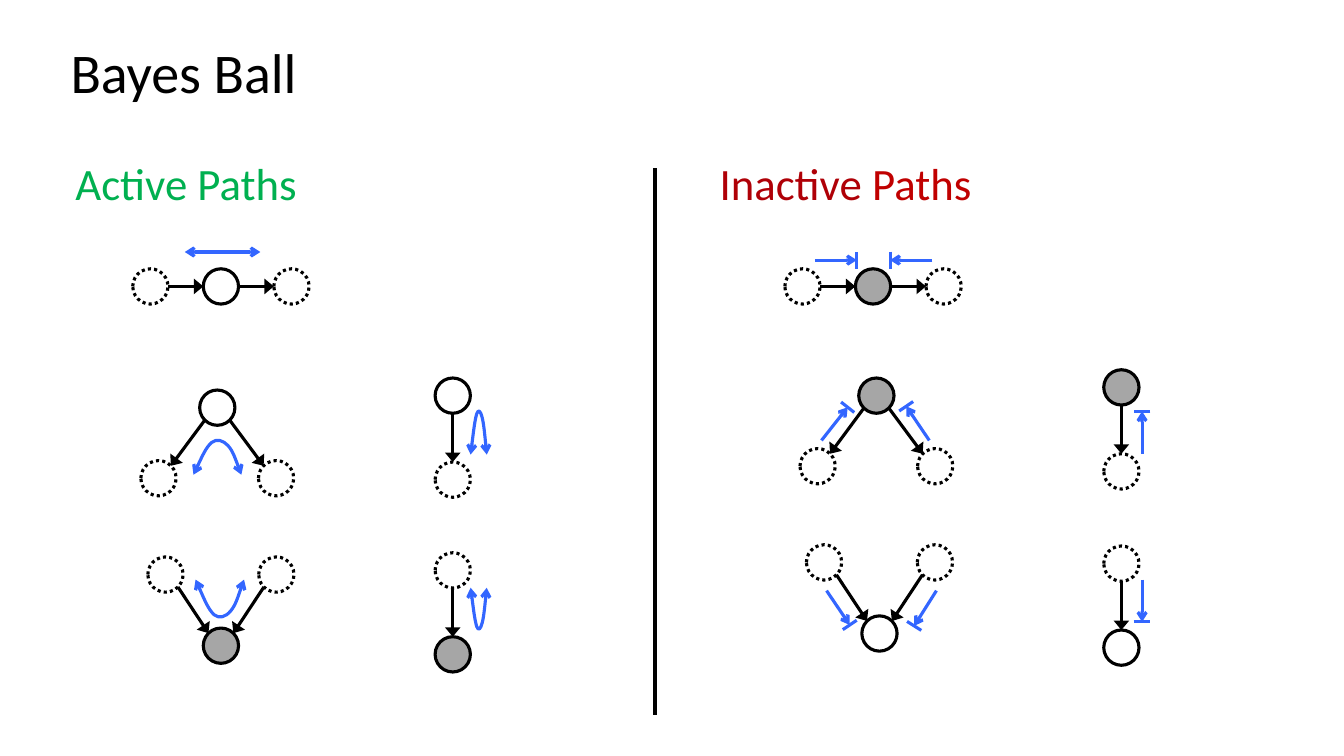
from math import atan2, cos, hypot, pi, sin

from lxml.etree import SubElement
from pptx import Presentation
from pptx.dml.color import RGBColor
from pptx.enum.dml import MSO_LINE
from pptx.enum.shapes import MSO_CONNECTOR, MSO_SHAPE
from pptx.enum.text import MSO_ANCHOR, MSO_AUTO_SIZE, PP_ALIGN
from pptx.oxml.ns import qn
from pptx.util import Pt

COLORS = {
    "black": "000000", "hidden": "FFFFFF", "observed": "A6A6A6",
    "ball": "3366FF", "green": "00B050", "dark red": "AF0007", "red": "C00000",
}
FONT = "Calibri"
TITLE = "Bayes Ball"
TITLE_BOX = (43.2, 28.8, 828, 49.7)
HEADINGS = [
    ((46.8, 108, 288, 46), [("Active Paths", "green")]),
    ((506.9, 108, 315.4, 46), [("Inactive", "dark red"), (" Paths", "red")]),
]
DIVIDER = ((468, 120.2), (468, 510.5))

DIAMETER = 25.2
BAR_LENGTH = 12
LINE_WIDTH = 2.25
EDGE_HEAD = {"type": "triangle", "w": "lg", "len": "med"}
BALL_HEAD = {"type": "arrow"}

# Dotted neighbours of the solid node: x offset, y offset, arrow direction
MOTIFS = {
    "chain": [(-50.4, 0, "in"), (50.4, 0, "out")],
    "fork": [(-42, 50.4, "out"), (42, 50.4, "out")],
    "collider": [(-39.6, -50.8, "in"), (39.6, -50.8, "in")],
    "parent": [(0, 60, "out")],
    "child": [(0, -60, "in")],
}
# Motif, centre of its solid node, state of that node
GRAPHS = [
    ("chain", (157.8, 204.6), "hidden"),
    ("fork", (155.2, 291.2), "hidden"),
    ("collider", (157.8, 461.2), "observed"),
    ("parent", (323.4, 282.6), "hidden"),
    ("child", (323.4, 467.4), "observed"),
    ("chain", (623.6, 204.6), "observed"),
    ("fork", (626, 282.6), "observed"),
    ("collider", (628.2, 452.5), "hidden"),
    ("parent", (801, 276.7), "observed"),
    ("child", (801, 462.6), "hidden"),
]
PASSING_BALL = ((132, 180), (186, 180))
# Left end of each bounce, width, height (negative rises)
BOUNCES = [
    (138.2, 339.1, 34.2, -24.5),
    (139.7, 414, 34.6, 26.6),
    (336.2, 324.7, 11.5, -31),
    (336.2, 419.8, 11.5, 29.5),
]
# Control points, in a unit box, of three cubic curves that start at (0, 0)
BOUNCE_CURVES = [
    [(0.13, 0.38), (0.26, 0.79), (0.38, 0.94)],
    [(0.49, 1.06), (0.62, 1), (0.72, 0.85)],
    [(0.83, 0.68), (1, 0), (1, 0)],
]
BLOCKED_BALLS = [
    ((582, 185.8), (612, 185.8)), ((666, 185.8), (635.8, 185.8)),
    ((586.8, 314.6), (605.5, 290.9)), ((663.8, 314.6), (647.3, 290.2)),
    ((590.4, 421.9), (607, 446.4)), ((668.9, 421.9), (653, 447.1)),
    ((815.8, 324), (815.8, 293.8)), ((815.8, 414), (815.8, 444.2)),
]


def color(name):
    return RGBColor.from_string(COLORS[name])


def points(*lengths):
    return [Pt(length) for length in lengths]


def apply_format(target, values):
    for name, value in values.items():
        setattr(target, name, value)


def style_line(line, color_name, width=LINE_WIDTH, head=None, tail=None):
    line.width = Pt(width)
    line.fill.solid()
    line.fill.fore_color.rgb = color(color_name)
    for tag, arrowhead in (("a:headEnd", head), ("a:tailEnd", tail)):
        if arrowhead:
            SubElement(line.fill._xPr, qn(tag), arrowhead)


def add_line(shapes, start, end, *style, **ends):
    connector = shapes.add_connector(MSO_CONNECTOR.STRAIGHT, *points(*start, *end))
    style_line(connector.line, *style, **ends)
    SubElement(connector._element.spPr, qn("a:effectLst"))


def add_node(shapes, center, state, dotted=False):
    x, y = center
    node = shapes.add_shape(MSO_SHAPE.OVAL, *points(
        x - DIAMETER / 2, y - DIAMETER / 2, DIAMETER, DIAMETER))
    node.shadow.inherit = False
    node.fill.solid()
    node.fill.fore_color.rgb = color(state)
    style_line(node.line, "black")
    if dotted:
        node.line.dash_style = MSO_LINE.ROUND_DOT


def rim_point(center, toward):
    """Point on a node's rim, at the multiple of 45 degrees nearest the target."""
    angle = atan2(toward[1] - center[1], toward[0] - center[0])
    angle = round(angle / (pi / 4)) * pi / 4
    return (center[0] + DIAMETER / 2 * cos(angle),
            center[1] + DIAMETER / 2 * sin(angle))


def add_graph(shapes, motif, center, state):
    add_node(shapes, center, state)
    for dx, dy, direction in MOTIFS[motif]:
        neighbour = (center[0] + dx, center[1] + dy)
        add_node(shapes, neighbour, "hidden", dotted=True)
        ends = [rim_point(center, neighbour), rim_point(neighbour, center)]
        if direction == "in":
            ends.reverse()
        add_line(shapes, *ends, "black", tail=EDGE_HEAD)


def add_bounce(shapes, left, end_y, width, height):
    """Curved two-way arrow; its straight segments are regrouped as cubic curves."""
    builder = shapes.build_freeform(*points(left, end_y))
    builder.add_line_segments(
        [points(left + u * width, end_y + v * height)
         for controls in BOUNCE_CURVES for u, v in controls], close=False)
    bounce = builder.convert_to_shape()
    segments = list(bounce._element.iter(qn("a:lnTo")))
    outline = segments[0].getparent()
    for first in range(0, len(segments), 3):
        curve = SubElement(outline, qn("a:cubicBezTo"))
        for segment in segments[first:first + 3]:
            curve.append(segment[0])
            outline.remove(segment)
    bounce.shadow.inherit = False
    bounce.fill.background()
    style_line(bounce.line, "ball", head=BALL_HEAD, tail=BALL_HEAD)


def add_blocked_ball(shapes, start, tip):
    """Arrow that stops at a bar set square to its tip."""
    add_line(shapes, start, tip, "ball", tail=BALL_HEAD)
    dx, dy = tip[0] - start[0], tip[1] - start[1]
    scale = BAR_LENGTH / 2 / hypot(dx, dy)
    add_line(shapes, (tip[0] - dy * scale, tip[1] + dx * scale),
             (tip[0] + dy * scale, tip[1] - dx * scale), "ball")


def write_text(shape, runs, size, anchor):
    frame = shape.text_frame
    apply_format(frame, {"word_wrap": True, "auto_size": MSO_AUTO_SIZE.NONE,
                         "vertical_anchor": anchor})
    paragraph = frame.paragraphs[0]
    paragraph.alignment = PP_ALIGN.LEFT
    for text, color_name in runs:
        run = paragraph.add_run()
        run.text = text
        apply_format(run.font, {"name": FONT, "size": Pt(size)})
        run.font.color.rgb = color(color_name)


def main():
    presentation = Presentation()
    apply_format(presentation, {"slide_width": Pt(960), "slide_height": Pt(540)})
    slide = presentation.slides.add_slide(presentation.slide_layouts[5])
    shapes = slide.shapes

    title = shapes.title
    apply_format(title, dict(zip(("left", "top", "width", "height"),
                                 points(*TITLE_BOX))))
    write_text(title, [(TITLE, "black")], 40, MSO_ANCHOR.MIDDLE)
    title.text_frame.paragraphs[0].line_spacing = 0.9

    for box, runs in HEADINGS:
        write_text(shapes.add_textbox(*points(*box)), runs, 32, MSO_ANCHOR.TOP)
    add_line(shapes, *DIVIDER, "black", 3)
    for graph in GRAPHS:
        add_graph(shapes, *graph)
    add_line(shapes, *PASSING_BALL, "ball", head=BALL_HEAD, tail=BALL_HEAD)
    for bounce in BOUNCES:
        add_bounce(shapes, *bounce)
    for ball in BLOCKED_BALLS:
        add_blocked_ball(shapes, *ball)
    presentation.save("out.pptx")


if __name__ == "__main__":
    main()
